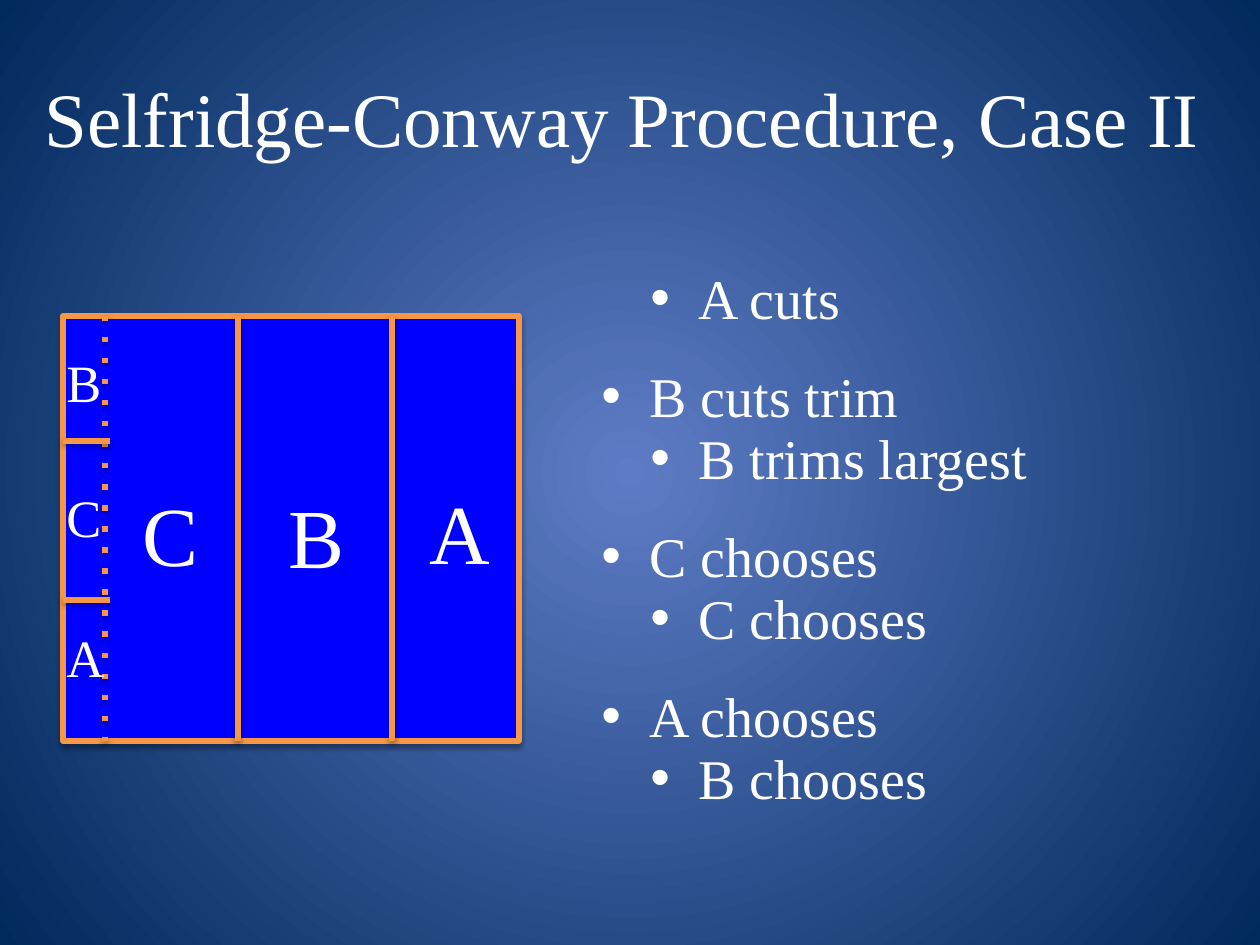
from lxml import etree
from pptx import Presentation
from pptx.dml.color import RGBColor
from pptx.enum.dml import MSO_LINE_DASH_STYLE as Dash
from pptx.enum.shapes import MSO_CONNECTOR as Conn, MSO_SHAPE as Shape
from pptx.enum.text import MSO_ANCHOR as Anchor, PP_ALIGN as Align
from pptx.oxml.ns import qn
from pptx.util import Emu, Pt

PX = 914400 // 126
FONT = "Times New Roman"
COLORS = {"centre": "5E7CC5", "edge": "00295C", "text": "FFFFFF",
          "cake": "0000FF", "cut": "F79646", "shadow": "000000"}


def px(*values):
    return [Emu(v * PX) for v in values]


def rgb(name):
    return RGBColor.from_string(COLORS[name])


def add_background(s):
    fill = s.background.fill
    fill.gradient()
    for stop, name, pos in zip(fill.gradient_stops, ("centre", "edge"), (0, 1)):
        stop.color.rgb = rgb(name)
        stop.position = pos
    # Radial instead of linear
    grad = s.element.xpath(".//a:gradFill")[0]
    lin = grad.find(qn("a:lin"))
    path = etree.Element(qn("a:path"), path="circle")
    etree.SubElement(path, qn("a:fillToRect"),
                     l="50000", t="50000", r="50000", b="50000")
    grad.replace(lin, path)


def add_shadow(sp, alpha, dist):
    pr = sp._element.spPr
    for old in pr.findall(qn("a:effectLst")):
        pr.remove(old)
    effects = etree.SubElement(pr, qn("a:effectLst"))
    shadow = etree.SubElement(
        effects, qn("a:outerShdw"), blurRad=str(Pt(3.1)), dist=str(Pt(dist)),
        dir="5400000", rotWithShape="0")
    color = etree.SubElement(shadow, qn("a:srgbClr"), val=COLORS["shadow"])
    etree.SubElement(color, qn("a:alpha"), val=str(alpha * 1000))


def style_line(sp):
    sp.line.color.rgb = rgb("cut")
    sp.line.width = Pt(3)


def add_cake(s, x, y, w, h):
    sp = s.shapes.add_shape(Shape.RECTANGLE, *px(x, y, w, h))
    sp.fill.solid()
    sp.fill.fore_color.rgb = rgb("cake")
    style_line(sp)
    add_shadow(sp, 35, 1.8)


def add_cut(s, x1, y1, x2, y2, dotted=False):
    sp = s.shapes.add_connector(Conn.STRAIGHT, *px(x1, y1, x2, y2))
    style_line(sp)
    if dotted:
        sp.line.dash_style = Dash.ROUND_DOT
        sp.line._ln.find(qn("a:prstDash")).set("val", "dot")
    add_shadow(sp, 38, 1.6)


def add_bullet(p, indent):
    pr = p._p.get_or_add_pPr()
    pr.set("marL", str(indent))
    pr.set("indent", str(-indent))
    etree.SubElement(pr, qn("a:buFont"), typeface="Arial")
    etree.SubElement(pr, qn("a:buChar"), char="•")


def add_text(s, lines, box, size, align=Align.LEFT, anchor=Anchor.TOP,
             bullets=False, gap=0):
    tf = s.shapes.add_textbox(*px(*box)).text_frame
    tf.word_wrap = True
    tf.vertical_anchor = anchor
    for i, line in enumerate(lines):
        p = tf.paragraphs[0] if i == 0 else tf.add_paragraph()
        p.alignment = align
        if i and gap:
            p.space_before = Pt(gap)
        if bullets:
            add_bullet(p, px(48)[0])
        r = p.add_run()
        r.text = line
        r.font.name, r.font.size = FONT, Pt(size)
        r.font.color.rgb = rgb("text")


def main():
    prs = Presentation()
    prs.slide_width, prs.slide_height = px(1260, 945)
    s = prs.slides.add_slide(prs.slide_layouts[6])
    add_background(s)

    # Title
    add_text(s, ["Selfridge-Conway Procedure, Case II"], (24, 38, 1197, 157), 44,
             align=Align.CENTER, anchor=Anchor.MIDDLE)

    # Interleaved steps: main cake on the left indent, trimmings on the right
    steps = {"bullets": True, "gap": 53}
    add_text(s, ["A cuts", "B trims largest", "C chooses", "B chooses"],
             (638, 257, 559, 624), 32, **steps)
    add_text(s, ["B cuts trim", "C chooses", "A chooses"],
             (589, 355, 476, 590), 32, **steps)

    # Cake with its cuts
    left, top, width, height = 63, 316, 456, 425
    add_cake(s, left, top, width, height)
    for x, dotted in ((392, False), (238, False), (105, True)):
        add_cut(s, x, top, x, top + height, dotted)
    for y in (441, 600):
        add_cut(s, left, y, 110, y)

    # Owners of the large pieces and of the trimmings
    for name, x, y in (("B", 276, 478), ("C", 130, 476), ("A", 417, 474)):
        add_text(s, [name], (x, y, 147, 122), 48)
    for name, y in (("C", 479), ("A", 619), ("B", 344)):
        add_text(s, [name], (54, y, 147, 122), 30)

    prs.save("out.pptx")


if __name__ == "__main__":
    main()
